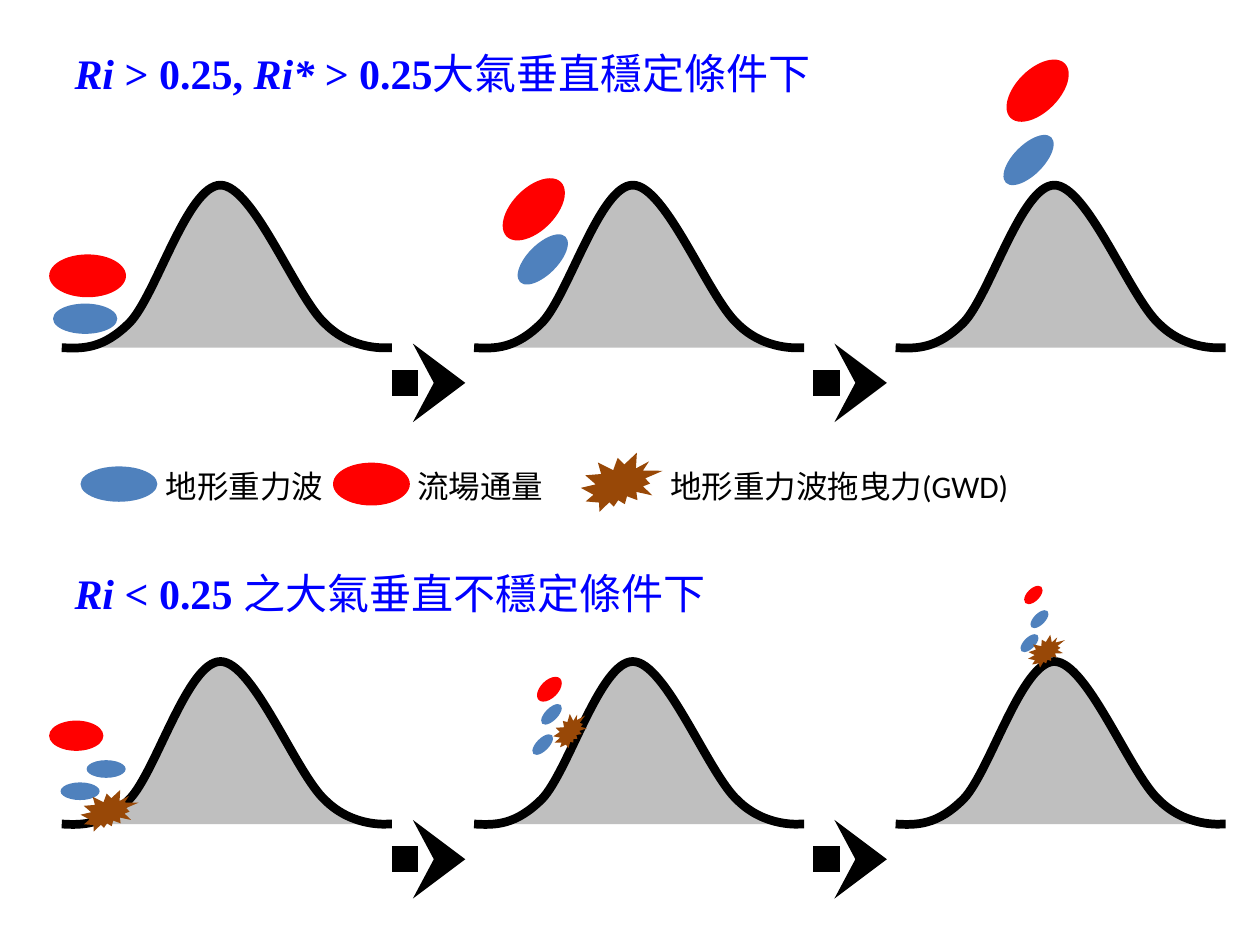
from lxml import etree
from pptx import Presentation
from pptx.dml.color import RGBColor
from pptx.enum.shapes import MSO_CONNECTOR, MSO_SHAPE
from pptx.enum.text import MSO_AUTO_SIZE
from pptx.oxml.ns import qn
from pptx.util import Pt

STRAIGHT = MSO_CONNECTOR.STRAIGHT
GROW = MSO_AUTO_SIZE.SHAPE_TO_FIT_TEXT
COLORS = {"wave": "4F81BD", "flux": "FF0000", "drag": "984807",
          "hill": "BFBFBF", "ink": "000000", "heading": "0000FF"}
MARKERS = {"wave": MSO_SHAPE.OVAL, "flux": MSO_SHAPE.OVAL,
           "drag": MSO_SHAPE.EXPLOSION2}
HEADING = {"name": "Times New Roman", "size": Pt(24), "bold": True}
LABEL = {"name": "Calibri", "size": Pt(18)}

# Hill outline, relative to the hill's top left corner
HILL_START = (0, 92.9)
HILL_CURVES = [
    ((12.2, 93.6), (23.8, 93.6), (38.9, 78.5)),
    ((54, 62.6), (72, 0), (90.7, 0)),
    ((109.4, 0), (133.9, 64.1), (150.5, 79.2)),
    ((166.3, 95), (186.5, 92.9), (186.5, 92.9)),
]
HILL_END = (188.6, 92.9)
HILL_LEFTS = (35.3, 270.9, 511.8)
ARROW_LENGTH, ARROW_GAP, ARROW_DROP = 42, 5, 113

# Markers of each stage: kind, left, top, width, height, rotation (from the hill)
STABLE_STAGES = [
    [("wave", -5, 67.7, 36.7, 17.3, 0), ("flux", -7.2, 39.6, 43.9, 24.5, 0)],
    [("wave", 20.9, 33.8, 36.7, 17.3, 315), ("flux", 12.2, 1.6, 43.9, 24.5, 315)],
    [("wave", 57.6, -23, 36.7, 17.3, 315), ("flux", 59.2, -66.2, 43.9, 24.5, 315)],
]
UNSTABLE_STAGES = [
    [("wave", -0.7, 69.1, 22.3, 10.1, 0), ("flux", -7.2, 33.8, 31, 17.3, 0),
     ("wave", 14.2, 56.4, 22.3, 10.1, 0), ("drag", 10.8, 73.4, 33.1, 23.8, 0)],
    [("wave", 31.7, 43.9, 15.1, 7.2, 315), ("flux", 34.4, 10.8, 17.3, 10.1, 315),
     ("wave", 36.7, 26.6, 15.1, 7.2, 315), ("drag", 43.7, 31, 23, 16.6, 330)],
    [("wave", 70, -13.7, 13, 6.5, 315), ("wave", 75.7, -27.4, 13, 6.5, 315),
     ("flux", 72.2, -41.6, 13, 7.2, 315), ("drag", 74.9, -14.4, 23, 16.6, 345)],
]

# Legend: marker, label left, label width, label
LEGEND = [
    (("wave", 46, 3, 43.9, 20.2, 0), 87.8, 105.1, "地形重力波"),
    (("flux", 190.3, 0.9, 43.9, 24.5, 0), 231.3, 87.1, "流場通量"),
    (("drag", 331.9, -4.8, 46.8, 33.8, 0), 375.8, 209.5, "地形重力波拖曳力(GWD)"),
]


def color(name):
    return RGBColor.from_string(COLORS[name])


def add_text(slide, box, runs, font_format, color_name):
    """Place one paragraph; runs are (text, extra font format) pairs."""
    shape = slide.shapes.add_textbox(*map(Pt, box))
    frame = shape.text_frame
    frame.word_wrap = True
    frame.auto_size = GROW
    for text, extra in runs:
        run = frame.paragraphs[0].add_run()
        run.text = text
        for attribute, value in {**font_format, **extra}.items():
            setattr(run.font, attribute, value)
        run.font.color.rgb = color(color_name)


def add_marker(slide, origin, marker):
    kind, left, top, width, height, rotation = marker
    box = (origin[0] + left, origin[1] + top, width, height)
    shape = slide.shapes.add_shape(MARKERS[kind], *map(Pt, box))
    shape.shadow.inherit = False
    shape.rotation = rotation
    shape.fill.solid()
    shape.fill.fore_color.rgb = color(kind)
    shape.line.fill.background()


def add_hill(slide, left, top):
    def place(point):
        return Pt(left + point[0]), Pt(top + point[1])

    points = [point for curve in HILL_CURVES for point in curve] + [HILL_END]
    builder = slide.shapes.build_freeform(*place(HILL_START))
    builder.add_line_segments([place(point) for point in points], close=False)
    shape = builder.convert_to_shape()

    # Merge each three segments into one cubic curve
    segments = list(shape._element.iter(qn("a:lnTo")))
    for index in range(0, 3 * len(HILL_CURVES), 3):
        curve = etree.Element(qn("a:cubicBezTo"))
        segments[index].addprevious(curve)
        for segment in segments[index:index + 3]:
            curve.append(segment[0])
            segment.getparent().remove(segment)

    shape.shadow.inherit = False
    shape.fill.solid()
    shape.fill.fore_color.rgb = color("hill")
    shape.line.color.rgb = color("ink")
    shape.line.width = Pt(5)


def add_arrow(slide, end, y):
    connector = slide.shapes.add_connector(
        STRAIGHT, Pt(end - ARROW_LENGTH), Pt(y), Pt(end), Pt(y))
    connector.line.color.rgb = color("ink")
    connector.line.width = Pt(15)
    properties = connector._element.spPr
    line = properties.find(qn("a:ln"))
    etree.SubElement(line, qn("a:prstDash"), val="sysDot")
    etree.SubElement(line, qn("a:tailEnd"), type="stealth", w="med", len="sm")
    etree.SubElement(properties, qn("a:effectLst"))


def add_sequence(slide, top, stages):
    """Three hills in a row, with arrows between and markers on each."""
    for index, (left, markers) in enumerate(zip(HILL_LEFTS, stages)):
        add_hill(slide, left, top)
        if index:
            add_arrow(slide, left - ARROW_GAP, top + ARROW_DROP)
        for marker in markers:
            add_marker(slide, (left, top), marker)


def add_legend(slide, top):
    for marker, left, width, label in LEGEND:
        add_marker(slide, (0, top), marker)
        add_text(slide, (left, top, width, 29), [(label, {})], LABEL, "ink")


def main():
    presentation = Presentation()
    presentation.slide_width, presentation.slide_height = Pt(720), Pt(540)
    slide = presentation.slides.add_slide(presentation.slide_layouts[6])
    italic, plain = {"italic": True}, {"bold": False}

    # Stable case
    add_text(slide, (35.5, 23.8, 439, 36),
             [("Ri ", italic), ("> 0.25, ", {}), ("Ri*", italic),
              (" > 0.25", {}), ("大氣垂直穩定條件下", plain)], HEADING, "heading")
    add_sequence(slide, 105.8, STABLE_STAGES)

    add_legend(slide, 263.5)

    # Unstable case
    add_text(slide, (35.5, 321, 378, 36),
             [("Ri", italic), (" < 0.25 ", {}),
              ("之大氣垂直不穩定條件下", plain)], HEADING, "heading")
    add_sequence(slide, 378, UNSTABLE_STAGES)

    presentation.save("out.pptx")


if __name__ == "__main__":
    main()
